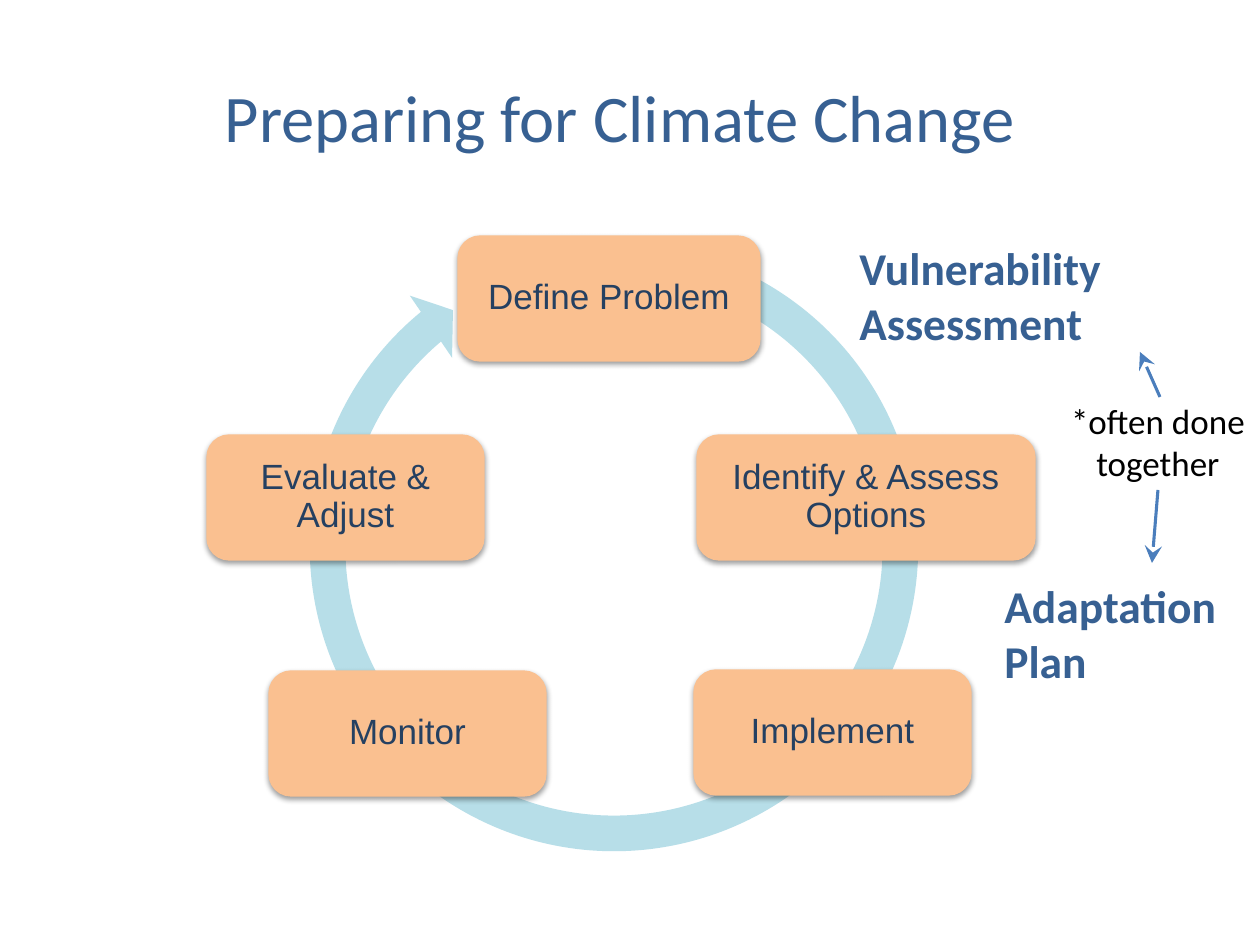
from lxml import etree
from pptx import Presentation
from pptx.dml.color import RGBColor
from pptx.enum.shapes import MSO_CONNECTOR, MSO_SHAPE
from pptx.enum.text import MSO_ANCHOR, PP_ALIGN
from pptx.oxml import parse_xml
from pptx.oxml.ns import nsdecls, qn
from pptx.util import Pt

PX = 914400 // 126
LEFT, CENTER = PP_ALIGN.LEFT, PP_ALIGN.CENTER
MIDDLE, TOP = MSO_ANCHOR.MIDDLE, MSO_ANCHOR.TOP
BLUE, NAVY, ORANGE = "376092", "254061", "FAC090"
RING, ARROW, BLACK = "B7DEE8", "4B7EBC", "000000"
SHADOW = f"""<a:effectLst {nsdecls("a")}>
  <a:outerShdw blurRad="40000" dist="20000" dir="5400000" rotWithShape="0">
    <a:srgbClr val="000000"><a:alpha val="38000"/></a:srgbClr>
  </a:outerShdw>
</a:effectLst>"""


def color(value):
    return RGBColor.from_string(value)


def write(shape, text, size, font, text_color, align, anchor, bold=False):
    text_frame = shape.text_frame
    text_frame.word_wrap = True
    text_frame.vertical_anchor = anchor
    text_frame.text = text
    for paragraph in text_frame.paragraphs:
        paragraph.alignment = align
        for run in paragraph.runs:
            run.font.size = Pt(size)
            run.font.name = font
            run.font.bold = bold
            run.font.color.rgb = color(text_color)


presentation = Presentation()
presentation.slide_width = 1260 * PX
presentation.slide_height = 945 * PX
slide = presentation.slides.add_slide(presentation.slide_layouts[6])
shapes = slide.shapes

# Cycle arrow behind the steps
ring = shapes.add_shape(MSO_SHAPE.CIRCULAR_ARROW, 290 * PX, 223 * PX, 648 * PX, 648 * PX)
for index, value in enumerate((0.055, 3.307, 138.166, 173.613, 0.058)):
    ring.adjustments[index] = value
ring.shadow.inherit = False
ring.fill.solid()
ring.fill.fore_color.rgb = color(RING)
ring.line.fill.background()

# Steps, clockwise: text, left, top, width
steps = [
    ("Define Problem", 460, 238, 298),
    ("Identify & Assess Options", 699, 437, 334),
    ("Implement", 696, 672, 273),
    ("Monitor", 271, 673, 273),
    ("Evaluate & Adjust", 209, 437, 273),
]
for text, left, top, width in steps:
    step = shapes.add_shape(
        MSO_SHAPE.ROUNDED_RECTANGLE, left * PX, top * PX, width * PX, 121 * PX)
    step.fill.solid()
    step.fill.fore_color.rgb = color(ORANGE)
    step.line.color.rgb = color(ORANGE)
    step.line.width = Pt(3)
    step.shadow.inherit = False
    properties = step.fill._xPr
    properties.replace(properties.find(qn("a:effectLst")), parse_xml(SHADOW))
    write(step, text, 20, "Arial", NAVY, CENTER, MIDDLE)
    step.text_frame.margin_left = step.text_frame.margin_right = 10 * PX
    step.text_frame.paragraphs[0].line_spacing = 0.9

# Title and side labels: text, box, size, colour, alignment, anchor, bold
labels = [
    ("Preparing for Climate Change", (53, 37, 1134, 158), 38, BLUE, CENTER, MIDDLE, False),
    ("Vulnerability Assessment", (847, 234, 305, 123), 26, BLUE, LEFT, TOP, True),
    ("Adaptation\nPlan", (992, 572, 273, 123), 26, BLUE, LEFT, TOP, True),
    ("*often done together", (1056, 393, 204, 97), 20, BLACK, CENTER, TOP, False),
]
for text, box, size, text_color, align, anchor, bold in labels:
    label = shapes.add_textbox(*(length * PX for length in box))
    write(label, text, size, "Calibri", text_color, align, anchor, bold)

# Arrows from the note to both labels
for points in ((1160, 397, 1140, 352), (1158, 490, 1152, 563)):
    arrow = shapes.add_connector(
        MSO_CONNECTOR.STRAIGHT, *(length * PX for length in points))
    arrow.line.color.rgb = color(ARROW)
    arrow.line.width = Pt(1.75)
    etree.SubElement(
        arrow.line._get_or_add_ln(), qn("a:tailEnd"), type="stealth", w="lg", len="lg")
    etree.SubElement(arrow._element.spPr, qn("a:effectLst"))

presentation.save("out.pptx")
